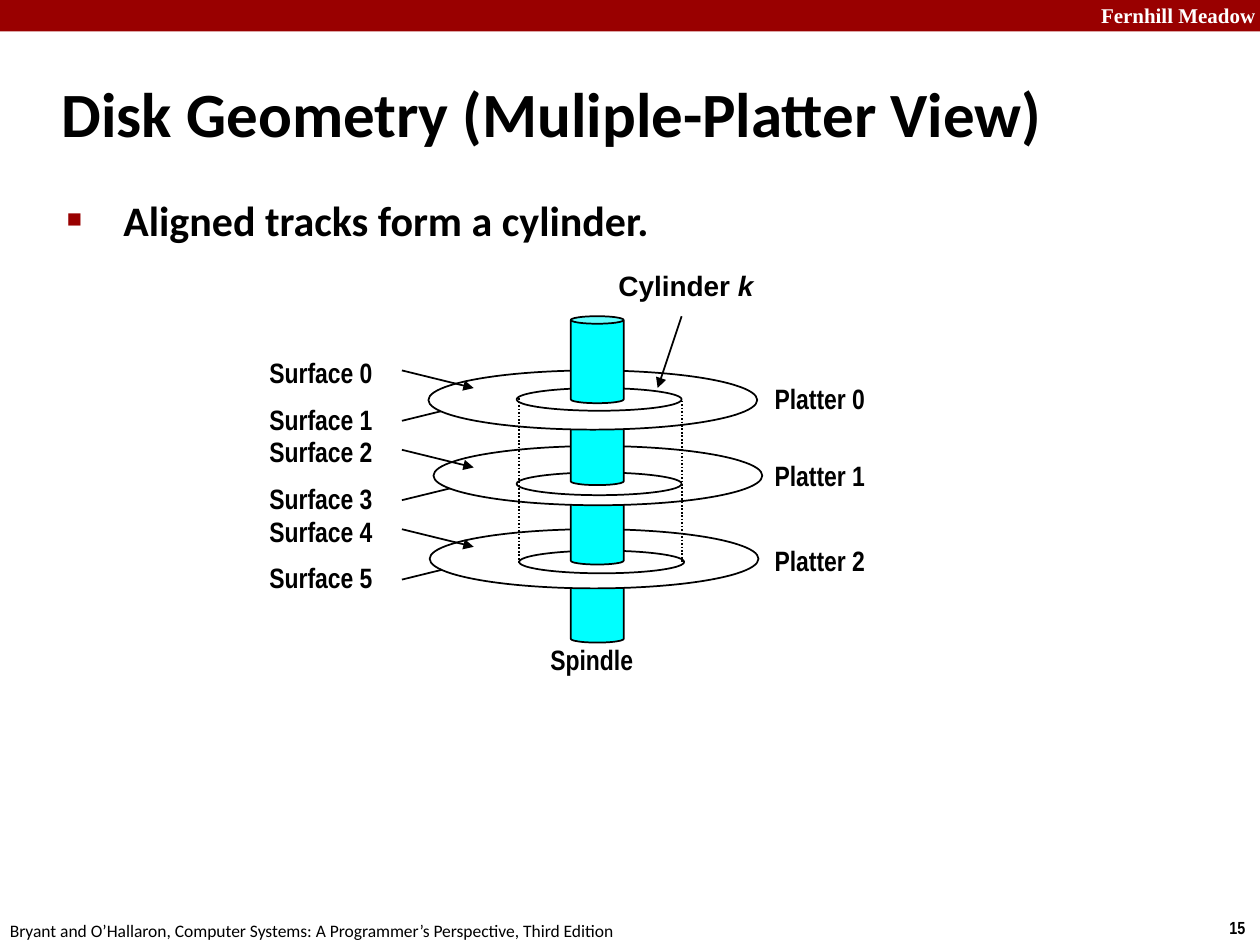
"""Build a slide showing the geometry of a disk with several platters."""
from typing import NamedTuple

from lxml import etree
from pptx import Presentation
from pptx.dml.color import RGBColor
from pptx.enum.dml import MSO_LINE
from pptx.enum.shapes import MSO_CONNECTOR, MSO_SHAPE
from pptx.enum.text import MSO_ANCHOR, MSO_AUTO_SIZE, PP_ALIGN
from pptx.oxml.ns import qn
from pptx.util import Inches, Pt

STRAIGHT = MSO_CONNECTOR.STRAIGHT
RECTANGLE, OVAL, CAN = MSO_SHAPE.RECTANGLE, MSO_SHAPE.OVAL, MSO_SHAPE.CAN
DOTTED = MSO_LINE.ROUND_DOT
MIDDLE, TOP = MSO_ANCHOR.MIDDLE, MSO_ANCHOR.TOP
LEFT = PP_ALIGN.LEFT
NO_AUTOSIZE, GROW = MSO_AUTO_SIZE.NONE, MSO_AUTO_SIZE.SHAPE_TO_FIT_TEXT

BLACK, WHITE, RED, CYAN = "000000", "FFFFFF", "990000", "00FFFF"
SURFACE_STEP = 0.63


class Box(NamedTuple):
    left: float
    top: float
    width: float
    height: float


class Label(NamedTuple):
    text: str
    box: Box
    size: float = 16
    font: str = "Arial Narrow"
    color: str = BLACK
    bold: bool = True
    italic_tail: str = ""


class Platter(NamedTuple):
    disk_left: float
    disk_top: float
    ring_left: float
    ring_top: float
    spindle_top: float
    label_top: float


class Line(NamedTuple):
    start: tuple[float, float]
    end: tuple[float, float]
    dotted: bool = False


PLATTERS = [
    Platter(3.4, 2.94, 4.1, 3.08, 2.51, 2.98),
    Platter(3.44, 3.54, 4.1, 3.75, 3.16, 3.59),
    Platter(3.41, 4.2, 4.12, 4.37, 3.79, 4.26),
]
LOWEST_SPINDLE_TOP = 4.41


def rgb(color: str) -> RGBColor:
    """Turn a hex string into a colour."""
    return RGBColor.from_string(color)


def inches(values) -> list:
    """Turn a sequence of numbers into lengths."""
    return [Inches(value) for value in values]


def set_values(target, values: dict) -> None:
    """Set each named attribute on the target."""
    for name, value in values.items():
        setattr(target, name, value)


def add_run(paragraph, text: str, label: Label, italic: bool = False) -> None:
    """Add one run in the format of the label."""
    run = paragraph.add_run()
    run.text = text
    set_values(run.font, {"size": Pt(label.size), "name": label.font,
                          "bold": label.bold, "italic": italic})
    run.font.color.rgb = rgb(label.color)


def add_label(slide, label: Label) -> None:
    """Add an unwrapped text box."""
    frame = slide.shapes.add_textbox(*inches(label.box)).text_frame
    set_values(frame, {"word_wrap": False, "auto_size": GROW, "vertical_anchor": MIDDLE})
    add_run(frame.paragraphs[0], label.text, label)
    if label.italic_tail:
        add_run(frame.paragraphs[0], label.italic_tail, label, italic=True)


def fill_placeholder(placeholder, label: Label, anchor, indent: float):
    """Move a placeholder, write its text and return the paragraph properties."""
    set_values(placeholder, dict(zip(label.box._fields, inches(label.box))))
    frame = placeholder.text_frame
    set_values(frame, {"word_wrap": True, "auto_size": NO_AUTOSIZE, "vertical_anchor": anchor})
    paragraph = frame.paragraphs[0]
    paragraph.alignment = LEFT
    add_run(paragraph, label.text, label)
    properties = paragraph._p.get_or_add_pPr()
    properties.set("marL", str(Inches(indent)))
    properties.set("indent", str(-Inches(indent)))
    return properties


def add_bullet(properties) -> None:
    """Give a paragraph a small red square bullet."""
    color = etree.SubElement(properties, qn("a:buClr"))
    etree.SubElement(color, qn("a:srgbClr"), val=RED)
    etree.SubElement(properties, qn("a:buSzPct"), val="60000")
    etree.SubElement(properties, qn("a:buFont"), typeface="Arial")
    etree.SubElement(properties, qn("a:buChar"), char="■")


def add_figure(slide, kind, box: Box, fill: str = "", outlined: bool = True):
    """Add a preset shape, hollow when no fill is given."""
    shape = slide.shapes.add_shape(kind, *inches(box))
    shape.shadow.inherit = False
    if fill:
        shape.fill.solid()
        shape.fill.fore_color.rgb = rgb(fill)
    else:
        shape.fill.background()
    if outlined:
        shape.line.color.rgb = rgb(BLACK)
        shape.line.width = Pt(1)
    else:
        shape.line.fill.background()
    return shape


def add_line(slide, line: Line) -> None:
    """Add a dotted line or an arrow."""
    connector = slide.shapes.add_connector(STRAIGHT, *inches(line.start + line.end))
    connector.line.color.rgb = rgb(BLACK)
    connector.line.width = Pt(1)
    properties = connector.element.spPr
    if line.dotted:
        connector.line.dash_style = DOTTED
    else:
        etree.SubElement(properties.find(qn("a:ln")), qn("a:tailEnd"), type="triangle")
    etree.SubElement(properties, qn("a:effectLst"))


def add_spindle(slide, top: float) -> None:
    """Add one section of the spindle."""
    can = add_figure(slide, CAN, Box(4.53, top, 0.42, 0.69), CYAN)
    can.adjustments[0] = 0.142


def add_disk(slide) -> None:
    """Stack the platters from the bottom up and point at their surfaces."""
    upper_tops = [2.94 + SURFACE_STEP * index for index in range(len(PLATTERS))]
    for top in upper_tops:
        add_line(slide, Line((3.19, top + 0.4), (3.76, top + 0.26)))
    add_spindle(slide, LOWEST_SPINDLE_TOP)
    for platter in reversed(PLATTERS):
        add_figure(slide, OVAL, Box(platter.disk_left, platter.disk_top, 2.61, 0.47), WHITE)
        add_figure(slide, OVAL, Box(platter.ring_left, platter.ring_top, 1.31, 0.18))
        add_spindle(slide, platter.spindle_top)
    for top in upper_tops:
        add_line(slide, Line((3.19, top), (3.76, top + 0.14)))
    add_line(slide, Line((4.12, 3.16), (4.12, 4.47), dotted=True))
    add_line(slide, Line((5.41, 3.18), (5.41, 4.48), dotted=True))
    add_line(slide, Line((5.41, 2.51), (5.22, 3.08)))


def add_disk_labels(slide) -> None:
    """Name the surfaces, platters, cylinder and spindle."""
    for index, platter in enumerate(PLATTERS):
        for side in range(2):
            top = 2.77 + SURFACE_STEP * index + 0.37 * side
            add_label(slide, Label(f"Surface {2 * index + side}", Box(2.04, top, 1.03, 0.37)))
        add_label(slide, Label(f"Platter {index}", Box(6.05, platter.label_top, 0.93, 0.37)))
    add_label(slide, Label("Cylinder ", Box(4.81, 2.08, 1.3, 0.37), font="Arial", italic_tail="k"))
    add_label(slide, Label("Spindle", Box(4.27, 5.05, 0.87, 0.37)))


def main() -> None:
    """Build and save the presentation."""
    presentation = Presentation()
    presentation.slide_width, presentation.slide_height = inches((10, 7.5))
    slide = presentation.slides.add_slide(presentation.slide_layouts[1])
    add_figure(slide, RECTANGLE, Box(0, 0, 10, 0.25), RED, outlined=False)
    add_label(slide, Label("Fernhill Meadow", Box(8.64, -0.03, 1.43, 0.3), 12,
                           "Times New Roman", WHITE))
    add_label(slide, Label("15", Box(9.66, 7.23, 0.34, 0.27), 10))
    add_label(slide, Label(
        "Bryant and O’Hallaron, Computer Systems: A Programmer’s Perspective, Third Edition",
        Box(-0.02, 7.25, 5.08, 0.27), 10, "Calibri", bold=False))
    title = Label("Disk Geometry (Muliple-Platter View)", Box(0.39, 0.48, 8.3, 0.83), 36, "Calibri")
    fill_placeholder(slide.shapes.title, title, MIDDLE, 0.13)
    body = Label("Aligned tracks form a cylinder.", Box(0.43, 1.49, 8.64, 5.44), 24, "Calibri")
    add_bullet(fill_placeholder(slide.placeholders[1], body, TOP, 0.45))
    add_disk(slide)
    add_disk_labels(slide)
    presentation.save("out.pptx")


if __name__ == "__main__":
    main()
